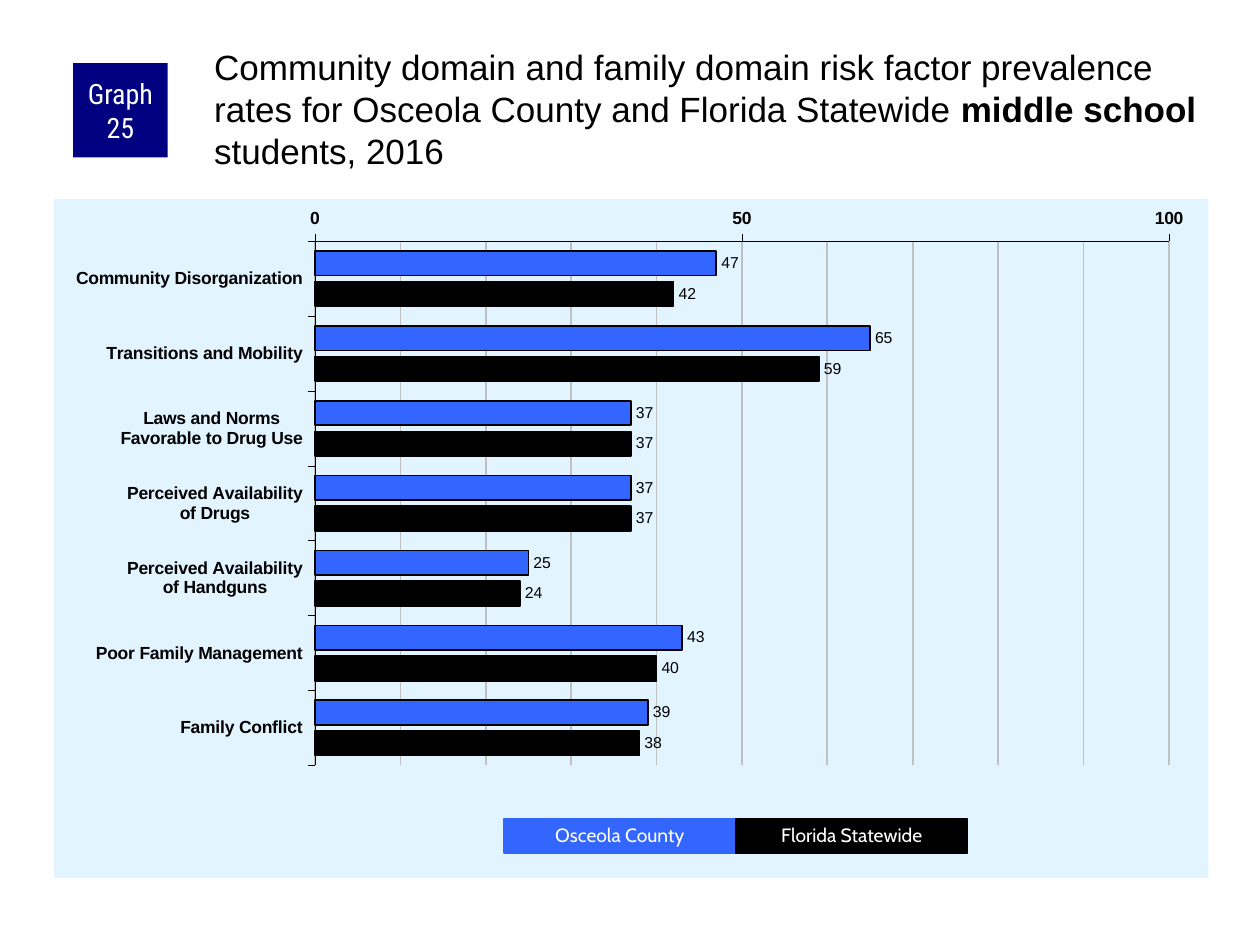
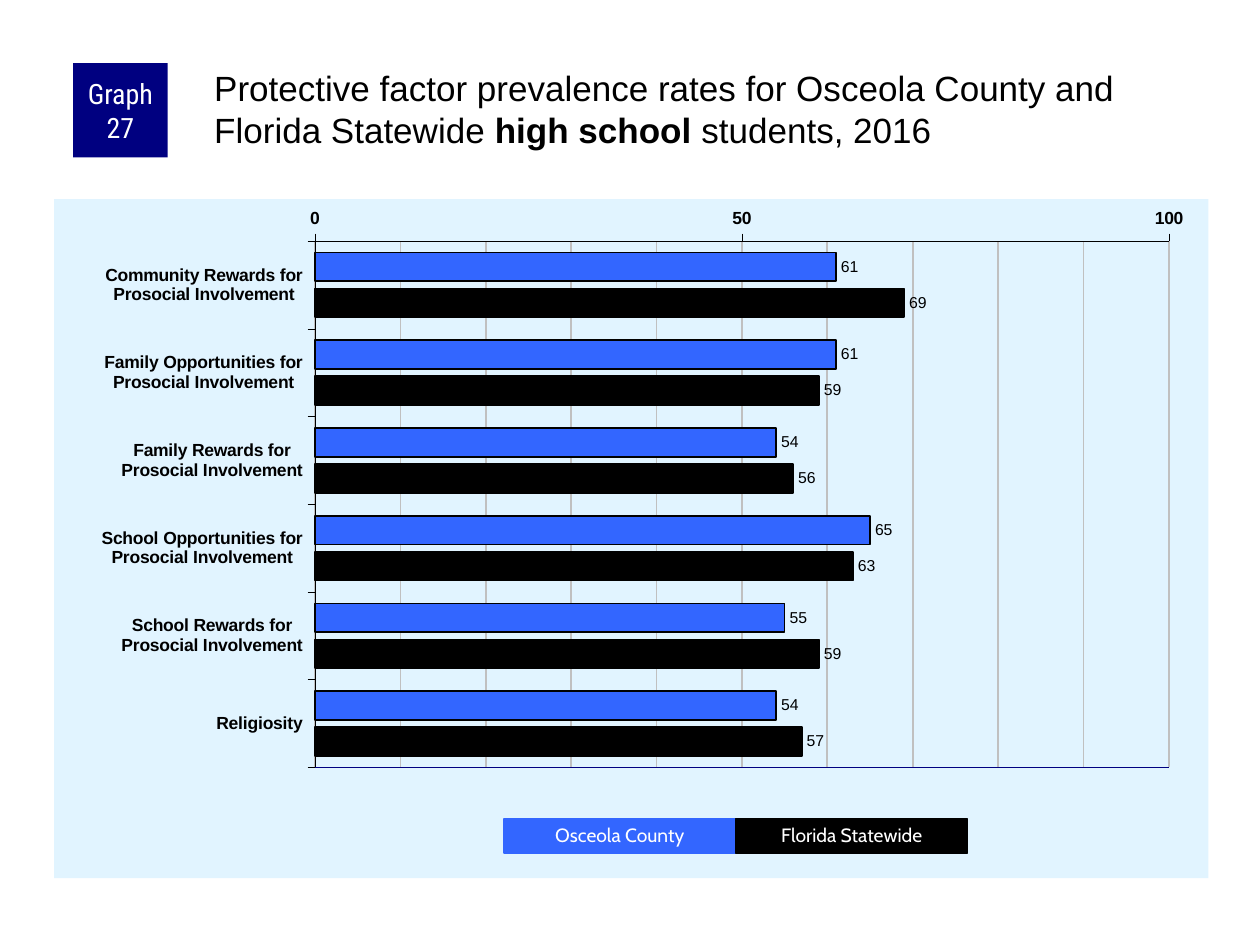
import copy
import pptx
import pptx.chart.data
import pptx.dml.color
import pptx.enum.chart
import pptx.enum.shapes
import pptx.enum.text
import pptx.oxml
import pptx.oxml.ns
import pptx.util
from dataclasses import dataclass
from pptx.util import Inches

# Content
GROUPS = ("Osceola County", "Florida Statewide")
GRAPHS = [
    {
        "badge": "Graph 25",
        "title": [
            ("Community domain and family domain risk factor prevalence rates "
             "for Osceola County and Florida Statewide ", False),
            ("middle school", True),
            (" students, 2016", False),
        ],
        "title_top": 0.33,
        "plot_height": 0.772,
        "navy_baseline": False,
        "rates": [
            ("Community Disorganization", 47, 42),
            ("Transitions and Mobility", 65, 59),
            ("Laws and Norms\nFavorable to Drug Use", 37, 37),
            ("Perceived Availability\nof Drugs", 37, 37),
            ("Perceived Availability\nof Handguns", 25, 24),
            ("Poor Family Management", 43, 40),
            ("Family Conflict", 39, 38),
        ],
    },
    {
        "badge": "Graph 27",
        "title": [
            ("Protective factor prevalence rates for Osceola County and "
             "Florida Statewide ", False),
            ("high school ", True),
            ("students, 2016", False),
        ],
        "title_top": 0.5,
        "plot_height": 0.775,
        "navy_baseline": True,
        "rates": [
            ("Community Rewards for\nProsocial Involvement", 61, 69),
            ("Family Opportunities for\nProsocial Involvement", 61, 59),
            ("Family Rewards for\nProsocial Involvement", 54, 56),
            ("School Opportunities for\nProsocial Involvement", 65, 63),
            ("School Rewards for\nProsocial Involvement", 55, 59),
            ("Religiosity", 54, 57),
        ],
    },
]


# Shared look
@dataclass(frozen=True)
class Theme:
    black: str = "000000"
    white: str = "FFFFFF"
    navy: str = "000080"
    grid: str = "C0C0C0"
    panel: str = "E1F4FF"
    groups: tuple = ("3366FF", "000000")
    body_font: str = "Arial"
    badge_font: str = "Roboto Condensed"
    legend_font: str = "Cabin"
    title_size: float = 20
    badge_size: float = 16
    legend_size: float = 11
    chart_size: float = 11.8
    axis_size: float = 10
    value_size: float = 9


THEME = Theme()
CHART_LEFT, CHART_TOP, CHART_WIDTH, CHART_HEIGHT = 0.43, 1.58, 9.16, 5.39
PLOT_X, PLOT_Y, PLOT_WIDTH = 0.226, 0.062, 0.74
LEGEND_LEFT, LEGEND_TOP, LEGEND_WIDTH, LEGEND_HEIGHT = 4, 6.5, 1.84, 0.27


def rgb(color):
    return pptx.dml.color.RGBColor.from_string(color)


def style_font(font, size, color=THEME.black, name=THEME.body_font, bold=False):
    font.size, font.name, font.bold = pptx.util.Pt(size), name, bold
    font.color.rgb = rgb(color)


def style_line(line, color, width):
    line.color.rgb = rgb(color)
    line.width = pptx.util.Pt(width)


def write(frame, text, size, color=THEME.black, name=THEME.body_font,
          align="LEFT", anchor="MIDDLE", insets=(0.1, 0.05, 0.1, 0.05), spacing=1.0):
    """Fill a frame with text, or with (text, bold) spans."""
    frame.word_wrap = True
    frame.auto_size = pptx.enum.text.MSO_AUTO_SIZE.NONE
    frame.vertical_anchor = getattr(pptx.enum.text.MSO_ANCHOR, anchor)
    (frame.margin_left, frame.margin_top,
     frame.margin_right, frame.margin_bottom) = map(Inches, insets)
    para = frame.paragraphs[0]
    para.alignment = getattr(pptx.enum.text.PP_ALIGN, align)
    para.line_spacing = spacing
    for words, bold in [(text, False)] if isinstance(text, str) else text:
        span = para.add_run()
        span.text = words
        style_font(span.font, size, color, name, bold)


def add_box(page, left, top, width, height, fill, outlined=False):
    box = page.shapes.add_shape(
        pptx.enum.shapes.MSO_SHAPE.RECTANGLE, *map(Inches, (left, top, width, height)))
    box.shadow.inherit = False
    box.fill.solid()
    box.fill.fore_color.rgb = rgb(fill)
    if outlined:
        style_line(box.line, fill, 0.75)
    else:
        box.line.fill.background()
    return box


def add_plot_edge(page, y, color, width):
    left = CHART_LEFT + PLOT_X * CHART_WIDTH
    right = left + PLOT_WIDTH * CHART_WIDTH
    edge = page.shapes.add_connector(
        pptx.enum.shapes.MSO_CONNECTOR.STRAIGHT, *map(Inches, (left, y, right, y)))
    style_line(edge.line, color, width)
    edge._element.spPr.append(pptx.oxml.parse_xml(
        f'<a:effectLst {pptx.oxml.ns.nsdecls("a")}/>'))


def set_chart_area(chart, plot_height):
    """Paint the chart background and fix the inner plot rectangle."""
    space = chart._chartSpace
    space.chart.addnext(pptx.oxml.parse_xml(
        f'<c:spPr {pptx.oxml.ns.nsdecls("c", "a")}><a:solidFill>'
        f'<a:srgbClr val="{THEME.panel}"/></a:solidFill>'
        '<a:ln><a:noFill/></a:ln></c:spPr>'))
    places = {"x": PLOT_X, "y": PLOT_Y, "w": PLOT_WIDTH, "h": plot_height}
    parts = ['<c:layoutTarget val="inner"/>', '<c:xMode val="edge"/>',
             '<c:yMode val="edge"/>']
    parts += [f'<c:{key} val="{value}"/>' for key, value in places.items()]
    area = space.chart.plotArea
    for layout in area.findall(pptx.oxml.ns.qn("c:layout")):
        area.remove(layout)
    area.insert(0, pptx.oxml.parse_xml(
        f'<c:layout {pptx.oxml.ns.nsdecls("c")}><c:manualLayout>'
        + "".join(parts) + '</c:manualLayout></c:layout>'))


def set_gridlines(scale):
    """Draw major and minor gridlines alike."""
    scale.has_major_gridlines = scale.has_minor_gridlines = True
    style_line(scale.major_gridlines.format.line, THEME.grid, 1)
    major, minor = (scale._element.find(pptx.oxml.ns.qn(tag))
                    for tag in ("c:majorGridlines", "c:minorGridlines"))
    minor.append(copy.deepcopy(major.find(pptx.oxml.ns.qn("c:spPr"))))


def add_rate_chart(page, rates, plot_height):
    labels, *columns = zip(*rates)
    data = pptx.chart.data.CategoryChartData()
    data.categories = labels
    for group, values in zip(GROUPS, columns):
        data.add_series(group, values)
    chart = page.shapes.add_chart(
        pptx.enum.chart.XL_CHART_TYPE.BAR_CLUSTERED,
        *map(Inches, (CHART_LEFT, CHART_TOP, CHART_WIDTH, CHART_HEIGHT)), data).chart
    chart.has_legend = chart.has_title = False
    style_font(chart.font, THEME.chart_size)
    set_chart_area(chart, plot_height)

    # Bars and their values
    plot = chart.plots[0]
    plot.gap_width, plot.overlap, plot.vary_by_categories = 80, -25, False
    for series, color in zip(plot.series, THEME.groups):
        series.format.fill.solid()
        series.format.fill.fore_color.rgb = rgb(color)
        style_line(series.format.line, THEME.black, 1)
        series.data_labels.show_value = True
        series.data_labels.position = pptx.enum.chart.XL_LABEL_POSITION.OUTSIDE_END
        style_font(series.data_labels.font, THEME.value_size)

    # Axes: first category on top, scale at the bottom
    for axis in (chart.category_axis, chart.value_axis):
        axis.major_tick_mark = pptx.enum.chart.XL_TICK_MARK.OUTSIDE
        style_font(axis.tick_labels.font, THEME.axis_size, bold=True)
        style_line(axis.format.line, THEME.black, 0.25)
    chart.category_axis.reverse_order = True
    chart.category_axis.crosses = pptx.enum.chart.XL_AXIS_CROSSES.MAXIMUM
    scale = chart.value_axis
    scale.minimum_scale, scale.maximum_scale = 0, 100
    scale.major_unit, scale.minor_unit = 50, 10
    set_gridlines(scale)


def build_page(deck, graph):
    page = deck.slides.add_slide(deck.slide_layouts[5])

    # Chart with its frame lines
    add_rate_chart(page, graph["rates"], graph["plot_height"])
    plot_top = CHART_TOP + PLOT_Y * CHART_HEIGHT
    add_plot_edge(page, plot_top, THEME.black, 0.25)
    if graph["navy_baseline"]:
        add_plot_edge(page, plot_top + graph["plot_height"] * CHART_HEIGHT, THEME.navy, 1)

    # Heading
    badge = add_box(page, 0.58, 0.5, 0.75, 0.75, THEME.navy)
    write(badge.text_frame, graph["badge"], THEME.badge_size, THEME.white,
          THEME.badge_font, align="CENTER", insets=(0.05, 0, 0.05, 0))
    title = page.shapes.title
    title.left, title.top, title.width, title.height = map(
        Inches, (1.67, graph["title_top"], 7.92, 0.83))
    write(title.text_frame, graph["title"], THEME.title_size, anchor="TOP",
          insets=(0.03, 0.03, 0, 0))

    # Legend
    for index, (group, color) in enumerate(zip(GROUPS, THEME.groups)):
        box = add_box(page, LEGEND_LEFT + index * LEGEND_WIDTH, LEGEND_TOP,
                      LEGEND_WIDTH, LEGEND_HEIGHT, color, outlined=True)
        write(box.text_frame, group, THEME.legend_size, THEME.white,
              THEME.legend_font, align="CENTER", spacing=0.9)


def main():
    deck = pptx.Presentation()
    deck.slide_width, deck.slide_height = Inches(10), Inches(7.5)
    for graph in GRAPHS:
        build_page(deck, graph)
    deck.save("out.pptx")


if __name__ == "__main__":
    main()
